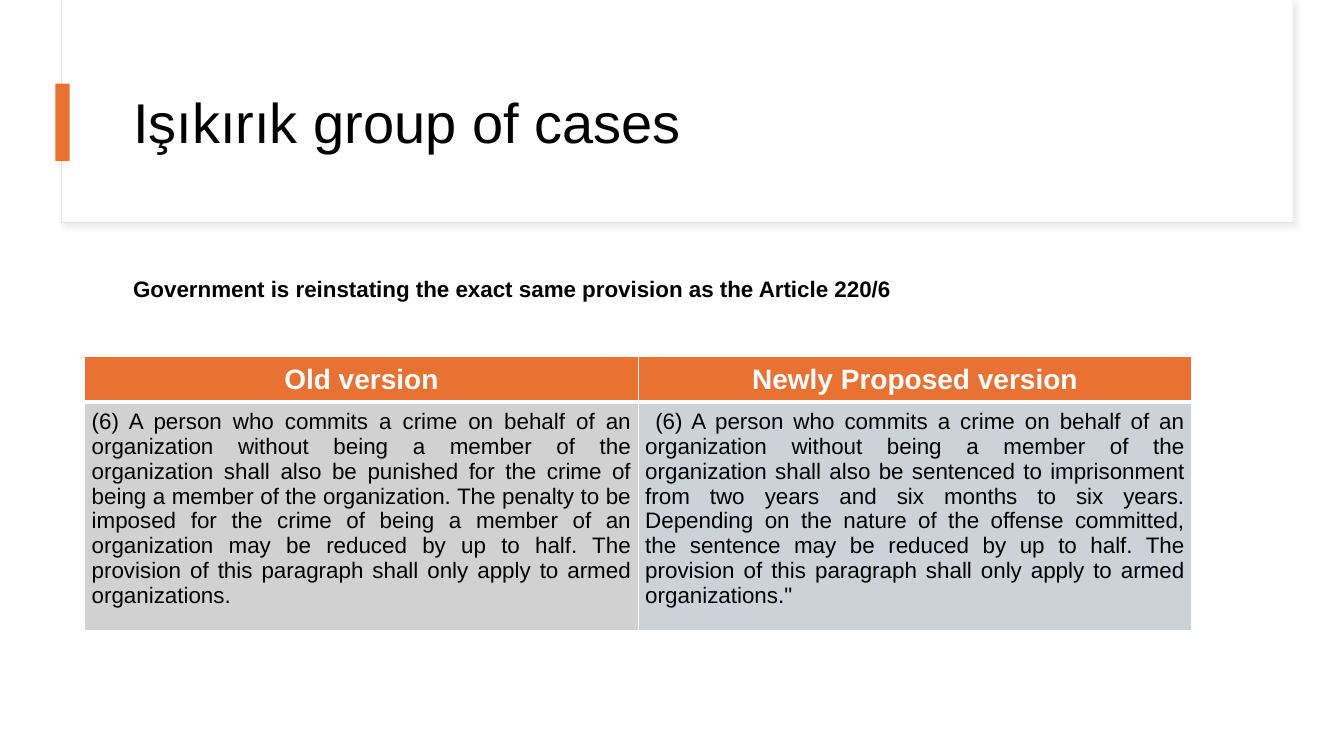
import pptx
import pptx.dml.color
import pptx.enum.shapes
import pptx.enum.text
import pptx.oxml
import pptx.oxml.ns
import pptx.util
from pptx.util import Inches

ALIGN = pptx.enum.text.PP_ALIGN
ANCHOR = pptx.enum.text.MSO_ANCHOR
FONT = "Arial"
BLACK, WHITE, ORANGE = "000000", "FFFFFF", "E97132"
A_NS = pptx.oxml.ns.nsdecls("a")

HEADERS = ["Old version", "Newly Proposed version"]
PROVISIONS = [
    "(6) A person who commits a crime on behalf of an organization without being "
    "a member of the organization shall also be punished for the crime of being a "
    "member of the organization. The penalty to be imposed for the crime of being "
    "a member of an organization may be reduced by up to half. The provision of "
    "this paragraph shall only apply to armed organizations.",
    " (6) A person who commits a crime on behalf of an organization without being "
    "a member of the organization shall also be sentenced to imprisonment from two "
    "years and six months to six years. Depending on the nature of the offense "
    "committed, the sentence may be reduced by up to half. The provision of this "
    "paragraph shall only apply to armed organizations.\"",
]


def rgb(color):
    return pptx.dml.color.RGBColor.from_string(color)


def set_text(tf, text, size, color, align, bold=False, spacing=None):
    tf.text = text
    p = tf.paragraphs[0]
    p.alignment = align
    p.line_spacing = spacing
    font = p.runs[0].font
    font.name, font.size, font.bold = FONT, pptx.util.Pt(size), bold
    font.color.rgb = rgb(color)


def add_rect(s, left, top, width, height, fill, line=None):
    sp = s.shapes.add_shape(
        pptx.enum.shapes.MSO_SHAPE.RECTANGLE,
        Inches(left), Inches(top), Inches(width), Inches(height))
    sp.shadow.inherit = False
    sp.fill.solid()
    sp.fill.fore_color.rgb = rgb(fill)
    if line:
        sp.line.color.rgb = rgb(line)
        sp.line.width = pptx.util.Pt(0.75)
    else:
        sp.line.fill.background()
    return sp


def add_soft_shadow(sp):
    effects = sp._element.spPr.find(pptx.oxml.ns.qn("a:effectLst"))
    effects.append(pptx.oxml.parse_xml(
        f'<a:outerShdw {A_NS} blurRad="{pptx.util.Pt(4)}" dist="{pptx.util.Pt(3)}" '
        'dir="2700000" algn="tl" rotWithShape="0"><a:srgbClr val="D9D9D9">'
        '<a:alpha val="50000"/></a:srgbClr></a:outerShdw>'))


def place_text(s, sp, left, top, width, height, text, size, anchor, bold=False):
    """Move a placeholder in front of the shapes and fill it."""
    sp.left, sp.top = Inches(left), Inches(top)
    sp.width, sp.height = Inches(width), Inches(height)
    s.shapes._spTree.append(sp._element)
    tf = sp.text_frame
    tf.word_wrap = True
    tf.auto_size = pptx.enum.text.MSO_AUTO_SIZE.NONE
    tf.vertical_anchor = anchor
    set_text(tf, text, size, BLACK, ALIGN.LEFT, bold, 0.9)
    return tf.paragraphs[0]


def remove_bullet(p):
    pPr = p._p.get_or_add_pPr()
    pPr.set("marL", "0")
    pPr.set("indent", "0")
    pPr.append(pptx.oxml.parse_xml(f"<a:buNone {A_NS}/>"))


def set_borders(cell, **widths):
    """Draw white borders; widths are points keyed L, R, T and B."""
    tcPr = cell._tc.get_or_add_tcPr()
    for i, (side, width) in enumerate(widths.items()):
        tcPr.insert(i, pptx.oxml.parse_xml(
            f'<a:ln{side} {A_NS} w="{pptx.util.Pt(width)}"><a:solidFill>'
            f'<a:srgbClr val="{WHITE}"/></a:solidFill></a:ln{side}>'))


def fill_cell(cell, text, fill, size, color, align, bold, top, bottom):
    cell.margin_left = cell.margin_right = Inches(0.07)
    cell.margin_top = cell.margin_bottom = Inches(0.07)
    cell.fill.solid()
    cell.fill.fore_color.rgb = rgb(fill)
    set_text(cell.text_frame, text, size, color, align, bold)
    set_borders(cell, L=1, R=1, T=top, B=bottom)


def add_comparison(s):
    table = s.shapes.add_table(
        2, 2, Inches(0.84), Inches(3.54), Inches(10.98), Inches(2.7)).table
    table.rows[0].height, table.rows[1].height = Inches(0.43), Inches(2.27)
    for col, fill in enumerate(["D1D1D1", "CCD2D8"]):
        table.columns[col].width = Inches(5.49)
        fill_cell(table.cell(0, col), HEADERS[col], ORANGE, 20, WHITE,
                  ALIGN.CENTER, True, 1, 3)
        fill_cell(table.cell(1, col), PROVISIONS[col], fill, 16, BLACK,
                  ALIGN.JUSTIFY, False, 3, 1)


def main():
    prs = pptx.Presentation()
    prs.slide_width, prs.slide_height = Inches(13.33), Inches(7.5)
    s = prs.slides.add_slide(prs.slide_layouts[1])

    add_soft_shadow(add_rect(s, 0.61, 0, 12.21, 2.21, WHITE, "E1E1E1"))
    add_rect(s, 0.62, 0, 12.2, 2.2, WHITE)
    place_text(s, s.shapes.title, 1.22, 0.6, 11.12, 1.29,
               "Işıkırık group of cases", 40, ANCHOR.MIDDLE)
    add_rect(s, 0.55, 0.83, 0.14, 0.77, ORANGE)
    p = place_text(s, s.placeholders[1], 1.22, 2.71, 11.12, 4.04,
                   "Government is reinstating the exact same provision as the "
                   "Article 220/6", 16, ANCHOR.TOP, True)
    p.space_before = pptx.util.Pt(10)
    remove_bullet(p)
    add_comparison(s)
    prs.save("out.pptx")


if __name__ == "__main__":
    main()
